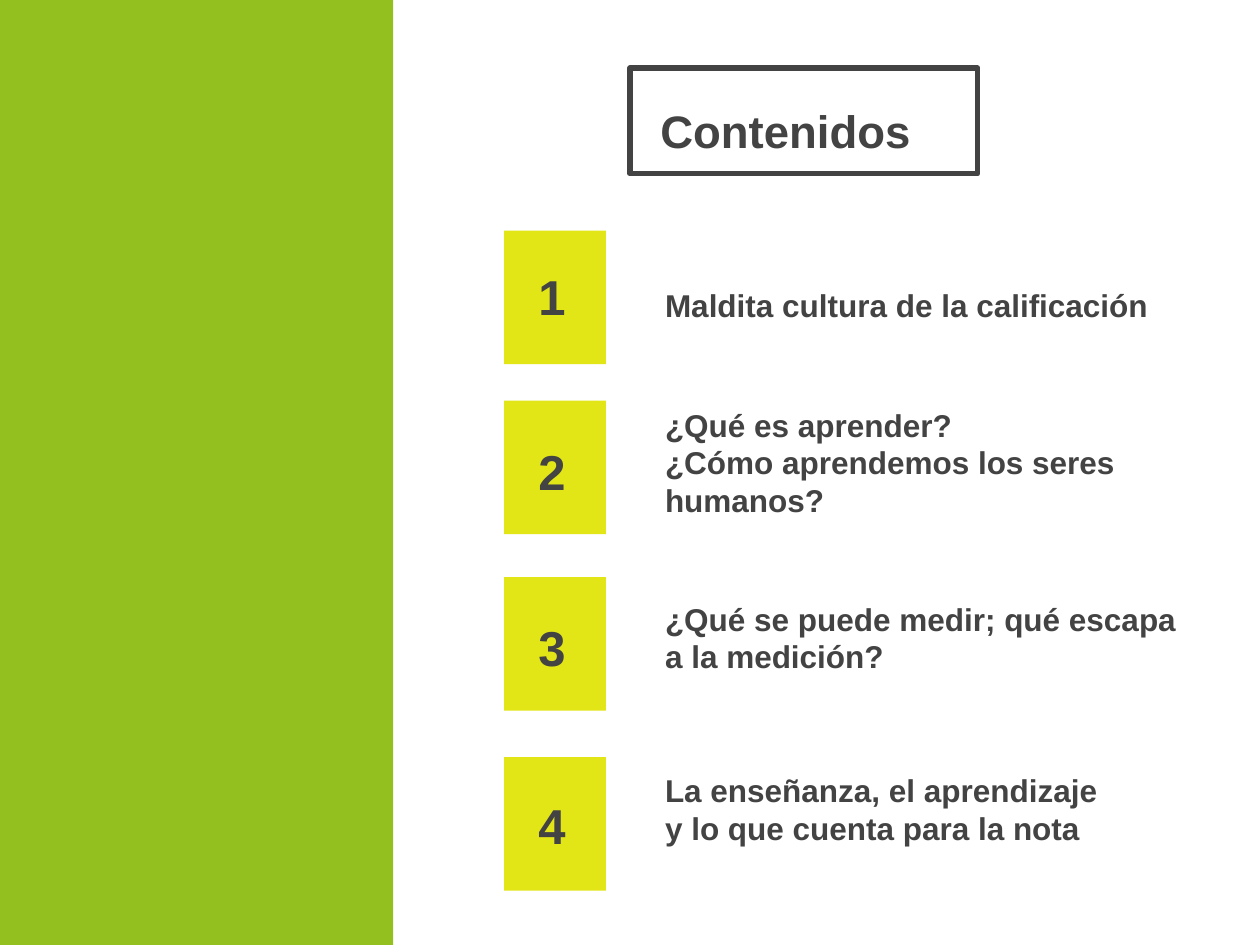
from pptx import Presentation
from pptx.dml.color import RGBColor
from pptx.enum.shapes import MSO_SHAPE
from pptx.enum.text import MSO_ANCHOR as Anchor, MSO_AUTO_SIZE as AutoSize, PP_ALIGN as Align
from pptx.util import Inches, Pt

COLORS = {"green": "93C01F", "yellow": "E2E616", "dark": "434343"}
FONT = "Arial"

# Each entry: tile top, number top, text, text top, text width, text height
CONTENTS = [
    (1.83, 1.88, "Maldita cultura de la calificación", 2, 5.81, 0.67),
    (3.18, 3.27, "¿Qué es aprender? \v¿Cómo aprendemos los seres humanos?", 3.22, 4.16, 1),
    (4.58, 4.67, "¿Qué se puede medir; qué escapa a la medición?", 4.53, 4.46, 0.93),
    (6.01, 6.08, "La enseñanza, el aprendizaje y lo que cuenta para la nota", 5.89, 3.7, 0.93),
]


def color(name):
    return RGBColor.from_string(COLORS[name])


def add_rectangle(page, left, top, width, height, fill=None, line=None):
    box = page.shapes.add_shape(
        MSO_SHAPE.RECTANGLE, Inches(left), Inches(top), Inches(width), Inches(height))
    box.shadow.inherit = False
    if fill:
        box.fill.solid()
        box.fill.fore_color.rgb = color(fill)
    else:
        box.fill.background()
    if line:
        box.line.color.rgb = color(line)
        box.line.width = Pt(3)
    else:
        box.line.fill.background()


def write_text(box, text, size, anchor, align=Align.LEFT, spacing=1.0):
    frame = box.text_frame
    frame.text = text
    frame.word_wrap = True
    frame.auto_size = AutoSize.NONE
    frame.vertical_anchor = anchor
    frame.margin_left = frame.margin_right = Inches(0.1)
    frame.margin_top = frame.margin_bottom = Inches(0.1)
    for para in frame.paragraphs:
        para.alignment = align
        para.line_spacing = spacing
        for span in para.runs:
            span.font.name = FONT
            span.font.size = Pt(size)
            span.font.bold = True
            span.font.color.rgb = color("dark")


def add_text(page, left, top, width, height, text, size, anchor, align=Align.LEFT):
    box = page.shapes.add_textbox(Inches(left), Inches(top), Inches(width), Inches(height))
    write_text(box, text, size, anchor, align)


def add_title(page, text):
    title = page.shapes.title
    title.left, title.top = Inches(5.14), Inches(0.19)
    title.width, title.height = Inches(5.81), Inches(1.62)
    write_text(title, text, 26, Anchor.MIDDLE, spacing=1.15)


def main():
    deck = Presentation()
    deck.slide_width, deck.slide_height = Inches(10), Inches(7.5)
    page = deck.slides.add_slide(deck.slide_layouts[5])

    # Side panel and framed title
    add_rectangle(page, 0, 0, 3.12, 7.5, fill="green")
    add_rectangle(page, 5, 0.54, 2.76, 0.84, line="dark")
    add_title(page, "Contenidos")

    # Numbered contents
    for number, (tile_top, number_top, text, top, width, height) in enumerate(CONTENTS, 1):
        add_rectangle(page, 4, tile_top, 0.81, 1.06, fill="yellow")
        add_text(page, 3.69, number_top, 1.38, 0.93, str(number), 28, Anchor.MIDDLE, Align.CENTER)
        add_text(page, 5.18, top, width, height, text, 18, Anchor.BOTTOM)

    deck.save("out.pptx")


if __name__ == "__main__":
    main()
